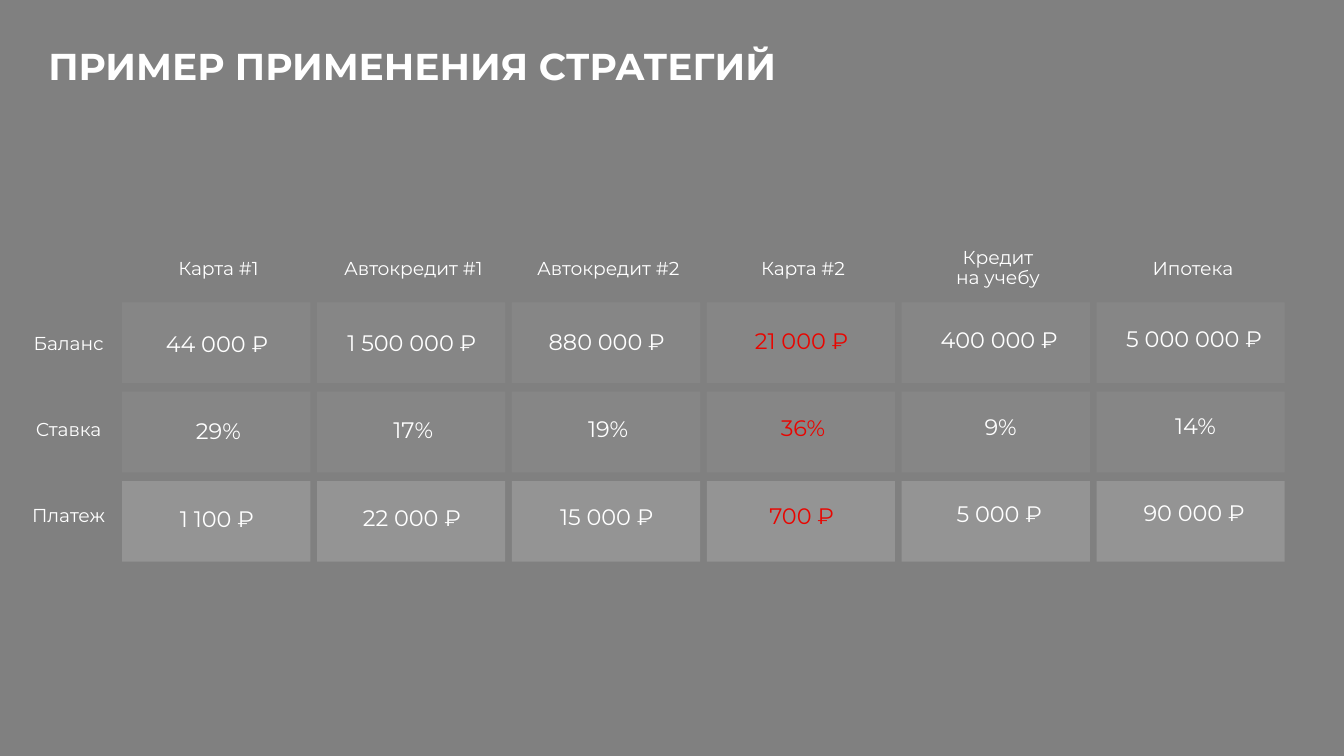
import pptx
import pptx.dml.color
import pptx.enum.shapes
import pptx.enum.text
import pptx.util
from pptx.oxml.ns import qn
from lxml import etree

RGBColor = pptx.dml.color.RGBColor
Inches = pptx.util.Inches
ALIGN = pptx.enum.text.PP_ALIGN
ANCHOR = pptx.enum.text.MSO_ANCHOR

GREY = RGBColor(0x80, 0x80, 0x80)
TILE = RGBColor(0xD9, 0xD9, 0xD9)
WHITE = RGBColor(0xFF, 0xFF, 0xFF)
RED = RGBColor(0xE9, 0x05, 0x00)

WIDTH = 10
HEIGHT = WIDTH * 9 / 16
COL_STEP, TILE_W = 1.45, 1.4
ROW_STEP, TILE_H = 1.33 / 2, 0.6
TEXT_W, TEXT_H = 1.41, 0.35
LABEL_W, LABEL_STEP = 0.92, 0.64
VALUE_STEP, VALUE_RISE = 0.65, 0.04 / 5

LOANS = ["Карта #1", "Автокредит #1", "Автокредит #2", "Карта #2",
         "Кредит\nна учебу", "Ипотека"]
HIGHLIGHT = LOANS.index("Карта #2")
# label, tile opacity in percent, shift of the values to the right, values
ROWS = [
    ("Баланс", 8, 0, ["44 000 ₽", "1 500 000 ₽", "880 000 ₽", "21 000 ₽",
                      "400 000 ₽", "5 000 000 ₽"]),
    ("Ставка", 8, 0.01, ["29%", "17%", "19%", "36%", "9%", "14%"]),
    ("Платеж", 23, 0, ["1 100 ₽", "22 000 ₽", "15 000 ₽", "700 ₽",
                       "5 000 ₽", "90 000 ₽"]),
]


def add_text(slide, box, text, size=10, color=WHITE, bold=False,
             align=ALIGN.CENTER, anchor=ANCHOR.TOP, spacing=0.9, inset=None):
    sp = slide.shapes.add_textbox(*map(Inches, box))
    tf = sp.text_frame
    tf.word_wrap = True
    tf.vertical_anchor = anchor
    if inset is not None:
        tf.margin_left = tf.margin_right = Inches(inset)
        tf.margin_top = tf.margin_bottom = Inches(inset)
    p = tf.paragraphs[0]
    p.text = text
    p.alignment = align
    p.line_spacing = spacing
    for r in p.runs:
        r.font.name = "Montserrat"
        r.font.size = pptx.util.Pt(size)
        r.font.bold = bold
        r.font.color.rgb = color


def add_rect(slide, box, color, opacity=100):
    sp = slide.shapes.add_shape(pptx.enum.shapes.MSO_SHAPE.RECTANGLE,
                                *map(Inches, box))
    sp.shadow.inherit = False
    sp.fill.solid()
    sp.fill.fore_color.rgb = color
    sp.line.fill.background()
    if opacity < 100:
        clr = sp.element.spPr.find(qn("a:solidFill")).find(qn("a:srgbClr"))
        etree.SubElement(clr, qn("a:alpha")).set("val", str(opacity * 1000))


def add_title(slide, box):
    add_text(slide, box, "ПРИМЕР ПРИМЕНЕНИЯ СТРАТЕГИЙ", size=20, bold=True,
             align=ALIGN.LEFT, anchor=ANCHOR.BOTTOM, spacing=0.75, inset=0)


def add_headers(slide, left, top):
    for col, loan in enumerate(LOANS):
        lift = 0.08 * loan.count("\n")
        add_text(slide, (left + col * COL_STEP, top - lift, TEXT_W, TEXT_H), loan)


def add_labels(slide, left, top):
    for row, (label, *_) in enumerate(ROWS):
        add_text(slide, (left, top + row * LABEL_STEP, LABEL_W, TEXT_H), label)


def add_tiles(slide, left, top):
    for row, (_, opacity, _, values) in enumerate(ROWS):
        for col in range(len(values)):
            add_rect(slide, (left + col * COL_STEP, top + row * ROW_STEP,
                             TILE_W, TILE_H), TILE, opacity)


def add_values(slide, left, top):
    """Place the values; each column sits slightly higher than the last."""
    for row, (_, _, shift, values) in enumerate(ROWS):
        for col, value in enumerate(values):
            nudge = shift + (0.02 if col > HIGHLIGHT else 0)
            box = (left + col * COL_STEP + nudge,
                   top + row * VALUE_STEP - col * VALUE_RISE, TEXT_W, TEXT_H)
            add_text(slide, box, value, size=12,
                     color=RED if col == HIGHLIGHT else WHITE)


def main():
    prs = pptx.Presentation()
    prs.slide_width, prs.slide_height = Inches(WIDTH), Inches(HEIGHT)
    slide = prs.slides.add_slide(prs.slide_layouts[6])
    add_rect(slide, (0, 0, WIDTH, HEIGHT), GREY)
    add_title(slide, (0.36, 0.39, 9.29, 0.26))
    add_tiles(slide, 0.91, 2.25)
    add_headers(slide, 0.92, 1.88)
    add_labels(slide, 0.05, 2.44)
    add_values(slide, 0.91, 2.43)
    prs.save("out.pptx")


if __name__ == "__main__":
    main()
